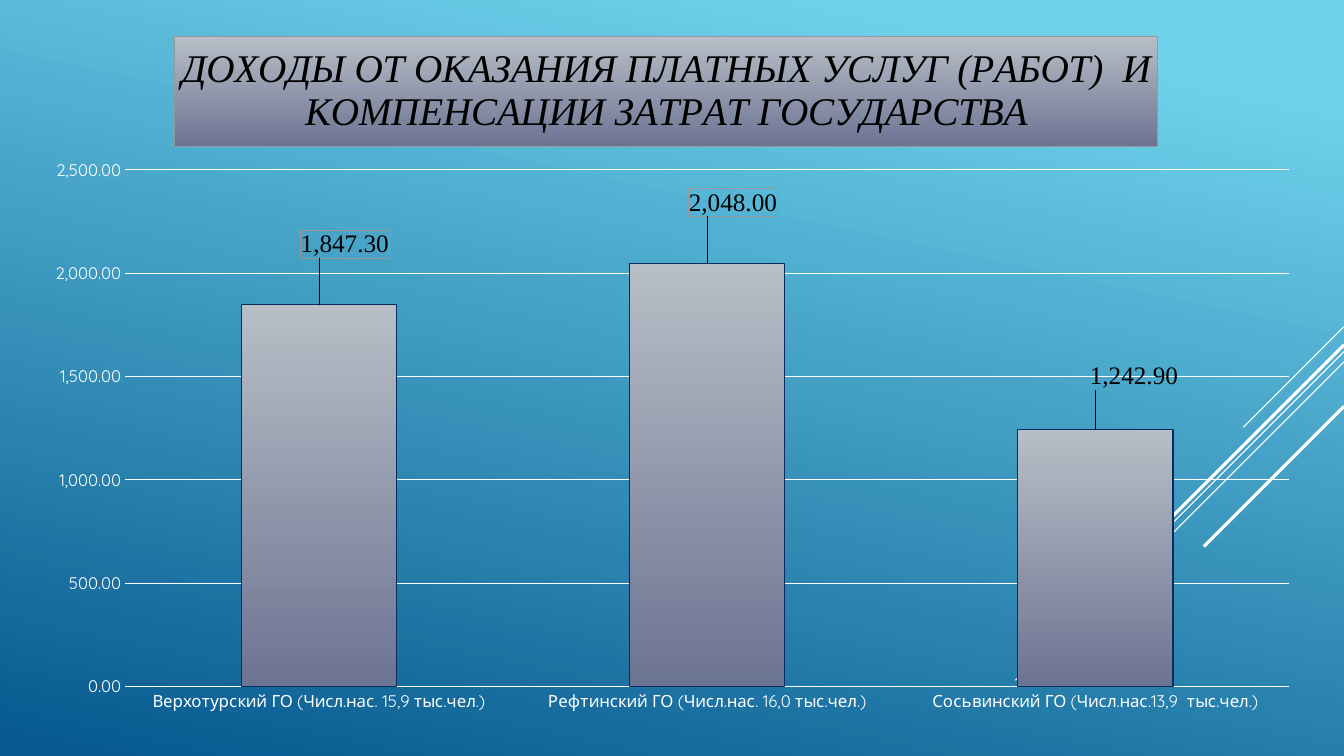
import pptx
import pptx.util
import pptx.chart.data
import pptx.dml.color
import pptx.enum.chart
import pptx.enum.shapes
import pptx.oxml
import pptx.oxml.ns

Cm = pptx.util.Cm
Pt = pptx.util.Pt
RGB = pptx.dml.color.RGBColor
qn = pptx.oxml.ns.qn

WHITE = RGB(0xFF, 0xFF, 0xFF)
BLACK = RGB(0x00, 0x00, 0x00)
SKY = RGB(0x6E, 0xD2, 0xEB)
DEEP = RGB(0x06, 0x58, 0x8E)
SILVER = RGB(0xB8, 0xBE, 0xC6)
SLATE = RGB(0x6C, 0x74, 0x93)
NAVY = RGB(0x05, 0x2E, 0x5F)
FRAME = RGB(0x9A, 0x96, 0x9E)

TITLE = "ДОХОДЫ ОТ ОКАЗАНИЯ ПЛАТНЫХ УСЛУГ (РАБОТ)  И КОМПЕНСАЦИИ ЗАТРАТ ГОСУДАРСТВА"
TOWNS = [
    "Верхотурский ГО (Числ.нас. 15,9 тыс.чел.)",
    "Рефтинский ГО (Числ.нас. 16,0 тыс.чел.)",
    "Сосьвинский ГО (Числ.нас.13,9  тыс.чел.)",
]
SUMS = [1847.3, 2048, 1242.9]
MONEY = "#,##0.00"

HEAD = {"name": "Times New Roman", "size": Pt(28), "bold": False, "italic": True}
LABEL = {"name": "Times New Roman", "size": Pt(18), "bold": False}
AXIS = {"name": "Quicksand", "size": Pt(12), "bold": False}
BASE = {"name": "Quicksand", "size": Pt(10)}

RIGHT = 33.87
RAYS = [
    (8.23, 2.54, 0.75),
    (8.86, 8.28, 0.75),
    (9.12, 5.26, 0.75),
    (8.69, 4.85, 2.25),
    (10.24, 3.53, 2.25),
]
SHIFTS = [(0.02, -0.06, True), (0.02, -0.06, True), (0.03, -0.05, False)]


def apply(item, values):
    for key, value in values.items():
        setattr(item, key, value)


def style(font, values, color):
    apply(font, values)
    font.color.rgb = color


def stroke(line, color, width):
    line.color.rgb = color
    line.width = Pt(width)


def blend(fill, angle, stops):
    fill.gradient()
    fill.gradient_angle = angle
    for stop, (place, color) in zip(fill.gradient_stops, stops):
        stop.position = place
        stop.color.rgb = color


def node(tag, **values):
    item = pptx.oxml.parse_xml(f"<{tag} {pptx.oxml.ns.nsdecls('c', 'a')}/>")
    for key, value in values.items():
        item.set(key, str(value))
    return item


def place(host, index, **values):
    for old in host.findall(qn("c:layout")):
        host.remove(old)
    layout = node("c:layout")
    manual = node("c:manualLayout")
    layout.append(manual)
    for key, value in values.items():
        manual.append(node(f"c:{key}", val=value))
    host.insert(index, layout)


def draw_ray(slide, top, span, width):
    ray = slide.shapes.add_connector(
        pptx.enum.shapes.MSO_CONNECTOR.STRAIGHT,
        Cm(RIGHT), Cm(top), Cm(RIGHT - span), Cm(top + span))
    stroke(ray.line, WHITE, width)
    ray._element.spPr.append(node("a:effectLst"))


def set_axis(axis):
    style(axis.tick_labels.font, AXIS, WHITE)
    axis.major_tick_mark = pptx.enum.chart.XL_TICK_MARK.NONE
    axis.format.line.fill.background()


def set_title(chart):
    title = chart.chart_title
    title.text_frame.text = TITLE
    style(title.text_frame.paragraphs[0].runs[0].font, HEAD, BLACK)
    blend(title.format.fill, 270, [(0, SILVER), (1, SLATE)])
    stroke(title.format.line, FRAME, 0.5)
    title.include_in_layout = False
    place(title._element, 1, xMode="edge", yMode="edge", x=0.113, y=0.027)


def set_label(point, left, top, framed):
    label = point.data_label
    style(label.font, LABEL, BLACK)
    label.position = pptx.enum.chart.XL_LABEL_POSITION.OUTSIDE_END
    mark = label._dLbl
    for old in mark.findall(qn("c:spPr")):
        mark.remove(old)
    place(mark, 1, x=left, y=top)
    mark.insert(2, node("c:numFmt", formatCode=MONEY, sourceLinked=0))
    if framed:
        box = node("c:spPr")
        line = node("a:ln", w=Pt(0.5))
        fill = node("a:solidFill")
        fill.append(node("a:srgbClr", val=FRAME))
        line.append(fill)
        box.append(line)
        mark.insert(3, box)


def add_bars(slide):
    data = pptx.chart.data.CategoryChartData(number_format=MONEY)
    data.categories = TOWNS
    data.add_series(TITLE, SUMS)
    chart = slide.shapes.add_chart(
        pptx.enum.chart.XL_CHART_TYPE.COLUMN_CLUSTERED,
        Cm(0.74), Cm(0.43), Cm(32.39), Cm(17.88), data).chart
    style(chart.font, BASE, WHITE)
    chart.has_legend = False
    set_title(chart)

    set_axis(chart.category_axis)
    scale = chart.value_axis
    set_axis(scale)
    apply(scale, {"minimum_scale": 0, "maximum_scale": 2500, "major_unit": 500})
    apply(scale.tick_labels, {"number_format": MONEY, "number_format_is_linked": False})
    stroke(scale.major_gridlines.format.line, WHITE, 0.75)

    plot = chart.plots[0]
    apply(plot, {"gap_width": 150, "vary_by_categories": False})
    bars = plot.series[0]
    blend(bars.format.fill, 270, [(0, SILVER), (1, SLATE)])
    stroke(bars.format.line, NAVY, 0.75)
    labels = bars.data_labels
    apply(labels, {"show_value": True, "number_format": MONEY,
                   "number_format_is_linked": False})
    style(labels.font, LABEL, BLACK)
    for index, shift in enumerate(SHIFTS):
        set_label(bars.points[index], *shift)
    area = chart._chartSpace.chart.plotArea
    place(area, 0, layoutTarget="inner", xMode="edge", yMode="edge",
          x=0.0745, y=0.2155, w=0.906, h=0.728)


def main():
    deck = pptx.Presentation()
    apply(deck, {"slide_width": Cm(33.87), "slide_height": Cm(19.05)})
    slide = deck.slides.add_slide(deck.slide_layouts[6])
    blend(slide.background.fill, 258, [(0.1, SKY), (1, DEEP)])
    for ray in RAYS:
        draw_ray(slide, *ray)
    add_bars(slide)
    deck.save("out.pptx")


if __name__ == "__main__":
    main()
